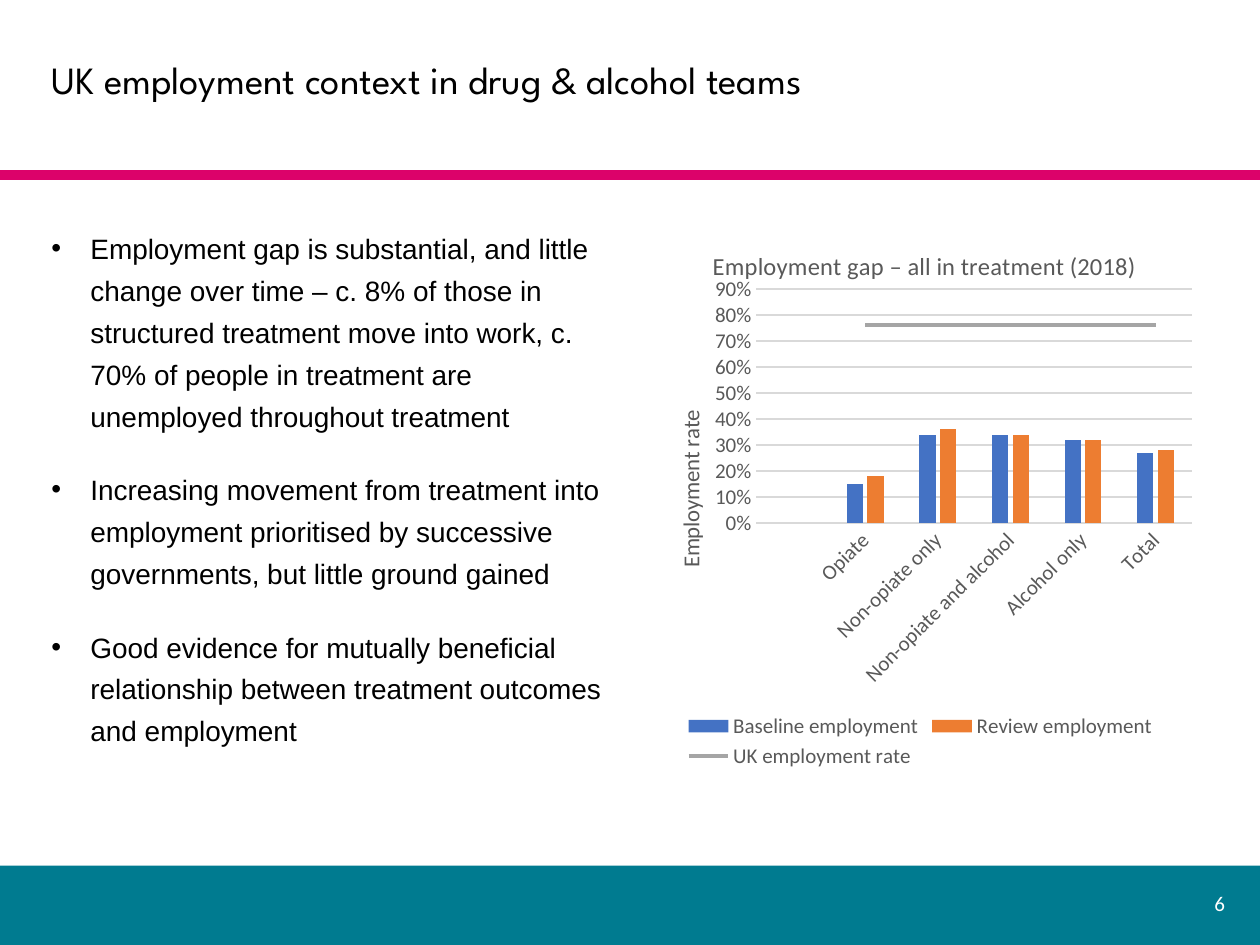
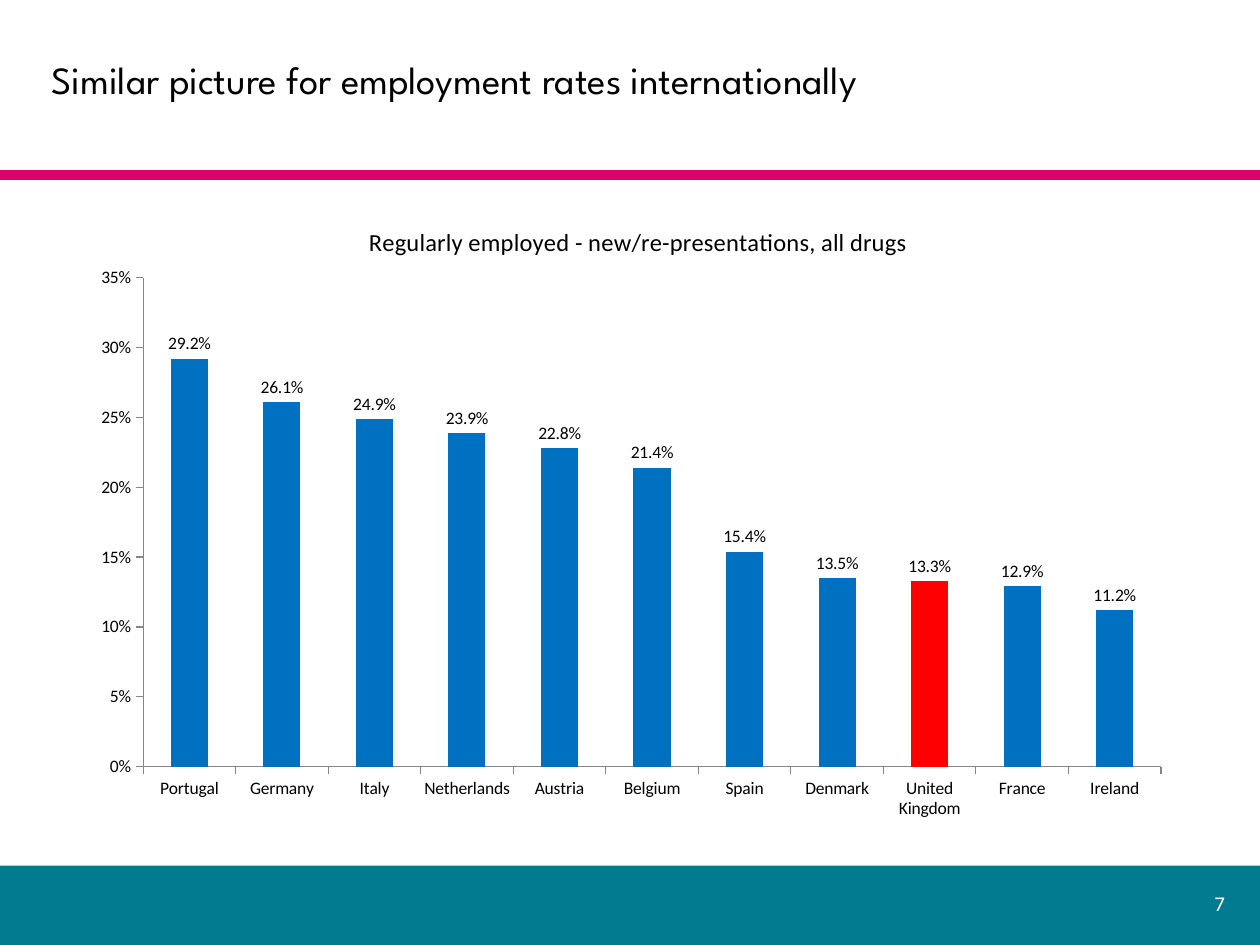
from lxml.etree import SubElement
from pptx import Presentation
from pptx.chart.data import CategoryChartData
from pptx.dml.color import RGBColor
from pptx.enum.chart import XL_CHART_TYPE as ChartType, XL_LEGEND_POSITION as LegendPosition
from pptx.enum.chart import XL_LABEL_POSITION as LabelPosition, XL_MARKER_STYLE as Marker
from pptx.enum.chart import XL_TICK_MARK as Tick
from pptx.enum.shapes import MSO_CONNECTOR as Connector, MSO_SHAPE as Shape
from pptx.enum.text import MSO_ANCHOR as Anchor, PP_ALIGN as Align
from pptx.oxml import parse_xml
from pptx.oxml.ns import nsdecls, qn
from pptx.util import Inches, Pt

COLUMNS, ROWS = 100, 75
BLACK, WHITE, TEAL, PINK = "000000", "FFFFFF", "007B90", "DC026A"
GREY_TEXT, PALE_GREY, AXIS_GREY = "595959", "D9D9D9", "868686"
BLUE, RED = "0070C0", "FF0000"


def colour(value):
    return RGBColor.from_string(value)


def set_font(font, size, ink=BLACK, face="Calibri"):
    font.size, font.name, font.bold = Pt(size), face, False
    font.color.rgb = colour(ink)


def set_line(line, ink, width=0.75):
    line.color.rgb = colour(ink)
    line.width = Pt(width)


def place(part, **shares):
    """Fix a chart part at shares of the chart's size."""
    for old in part.findall(qn("c:layout")):
        part.remove(old)
    layout = part.makeelement(qn("c:layout"))
    part.insert(0 if part.find(qn("c:tx")) is None else 1, layout)
    manual = SubElement(layout, qn("c:manualLayout"))
    if "w" in shares:
        SubElement(manual, qn("c:layoutTarget")).set("val", "inner")
    for axis in "xy":
        SubElement(manual, qn(f"c:{axis}Mode")).set("val", "edge")
    for side, share in shares.items():
        SubElement(manual, qn(f"c:{side}")).set("val", str(share))


def draw_as_line(chart, index):
    """Move one column series to a line plot on the same axes."""
    columns = chart.plots[0]._element
    series = columns.findall(qn("c:ser"))[index]
    for flag in series.findall(qn("c:invertIfNegative")):
        series.remove(flag)
    line_plot = parse_xml(
        f'<c:lineChart {nsdecls("c")}><c:grouping val="standard"/>'
        '<c:varyColors val="0"/></c:lineChart>')
    line_plot.append(series)
    SubElement(line_plot, qn("c:marker")).set("val", "1")
    for axis_id in columns.findall(qn("c:axId")):
        SubElement(line_plot, qn("c:axId")).set("val", axis_id.get("val"))
    columns.addnext(line_plot)
    return chart.plots[1].series[0]


class Deck:
    """Shared style and the slide being built."""

    def __init__(self):
        self.show = Presentation()
        self.show.slide_width, self.show.slide_height = Inches(10), Inches(7.5)
        self.slide = None

    def across(self, columns):
        return round(self.show.slide_width * columns / COLUMNS)

    def down(self, rows):
        return round(self.show.slide_height * rows / ROWS)

    def box(self, left, top, width, height):
        return self.across(left), self.down(top), self.across(width), self.down(height)

    def add_slide(self, heading, number):
        self.slide = self.show.slides.add_slide(self.show.slide_layouts[5])
        title = self.slide.shapes.title
        title.left, title.top, title.width, title.height = self.box(3.1, 2.3, 94, 8.4)
        frame = title.text_frame
        frame.text = heading
        frame.vertical_anchor = Anchor.MIDDLE
        line = frame.paragraphs[0]
        line.alignment, line.line_spacing = Align.LEFT, 0.9
        set_font(line.runs[0].font, 22, face="League Spartan")
        self.footer_band()
        self.rule()
        self.page_number(number)

    def footer_band(self):
        band = self.slide.shapes.add_shape(Shape.RECTANGLE, *self.box(0, 68.7, 100, 6.3))
        band.shadow.inherit = False
        band.fill.solid()
        band.fill.fore_color.rgb = colour(TEAL)
        band.line.fill.background()

    def rule(self):
        height = self.down(13.9)
        rule = self.slide.shapes.add_connector(
            Connector.STRAIGHT, 0, height, self.across(COLUMNS), height)
        set_line(rule.line, PINK, 6)
        SubElement(rule._element.spPr, qn("a:effectLst"))

    def page_number(self, number):
        frame = self.slide.shapes.add_textbox(*self.box(93.9, 69.7, 4.3, 4)).text_frame
        frame.word_wrap = True
        frame.vertical_anchor = Anchor.MIDDLE
        frame.text = str(number)
        frame.paragraphs[0].alignment = Align.RIGHT
        set_font(frame.paragraphs[0].runs[0].font, 12, WHITE)

    def bullets(self, points, *cells):
        frame = self.slide.shapes.add_textbox(*self.box(*cells)).text_frame
        frame.word_wrap = True
        frame.text = "\n".join(points)
        for point in frame.paragraphs:
            point.line_spacing = 1.25
            point.space_before, point.space_after = Pt(12), Pt(6)
            set_font(point.runs[0].font, 16, face="Arial")
            indent = point._p.get_or_add_pPr()
            indent.set("marL", str(Inches(0.31)))
            indent.set("indent", str(-Inches(0.31)))
            SubElement(indent, qn("a:buFont")).set("typeface", "Arial")
            SubElement(indent, qn("a:buChar")).set("char", "•")

    def column_chart(self, heading, ink, categories, series, gap, cells, plot, heading_at):
        data = CategoryChartData(number_format="0%")
        data.categories = categories
        for name, values in series.items():
            data.add_series(name, values)
        chart = self.slide.shapes.add_chart(
            ChartType.COLUMN_CLUSTERED, *self.box(*cells), data).chart
        set_font(chart.font, 10)
        chart.has_legend = False
        title = chart.chart_title
        title.text_frame.text = heading
        title.include_in_layout = False
        set_font(title.text_frame.paragraphs[0].runs[0].font, 14, ink)
        place(title._element, **heading_at)
        place(chart._chartSpace.chart.plotArea, **plot)
        chart.plots[0].gap_width = gap
        chart.plots[0].vary_by_categories = False
        return chart

    def style_axes(self, chart, size, ink, tick, top, step):
        for axis in (chart.category_axis, chart.value_axis):
            axis.major_tick_mark, axis.minor_tick_mark = tick, Tick.NONE
            axis.has_major_gridlines = False
            set_font(axis.tick_labels.font, size, ink)
            set_line(axis.format.line, AXIS_GREY)
        scale = chart.value_axis
        scale.minimum_scale, scale.maximum_scale, scale.major_unit = 0, top, step
        scale.tick_labels.number_format = "0%"
        scale.tick_labels.number_format_is_linked = False


def uk_context(deck):
    deck.add_slide("UK employment context in drug & alcohol teams", 6)
    deck.bullets([
        "Employment gap is substantial, and little change over time – c. 8% of those in "
        "structured treatment move into work, c. 70% of people in treatment are "
        "unemployed throughout treatment",
        "Increasing movement from treatment into employment prioritised by successive "
        "governments, but little ground gained",
        "Good evidence for mutually beneficial relationship between treatment outcomes "
        "and employment",
    ], 3.1, 17.2, 46.3, 48.2)
    gap_chart = deck.column_chart(
        "Employment gap – all in treatment (2018)", GREY_TEXT,
        ["", "Opiate", "Non-opiate only", "Non-opiate and alcohol", "Alcohol only", "Total"],
        {"Baseline employment": [None, 0.15, 0.34, 0.34, 0.32, 0.27],
         "Review employment": [None, 0.18, 0.36, 0.34, 0.32, 0.28],
         "UK employment rate": [None] + [0.76] * 5},
        219, (50.6, 17.2, 44.9, 44.2),
        dict(x=0.21, y=0.13, w=0.77, h=0.42), dict(x=0.125, y=0.05))
    deck.style_axes(gap_chart, 12, GREY_TEXT, Tick.NONE, 0.9, 0.1)
    uk_rate = draw_as_line(gap_chart, 2)
    uk_rate.smooth = False
    uk_rate.marker.style = Marker.NONE
    set_line(uk_rate.format.line, "A5A5A5", 2.25)
    columns = gap_chart.plots[0]
    columns.overlap = -27
    for stage, ink in zip(columns.series, ("4472C4", "ED7D31")):
        stage.format.fill.solid()
        stage.format.fill.fore_color.rgb = colour(ink)
    groups, rate = gap_chart.category_axis, gap_chart.value_axis
    set_line(groups.format.line, PALE_GREY)
    groups._element.find(qn("c:txPr")).find(qn("a:bodyPr")).set("rot", "-2700000")
    rate.format.line.fill.background()
    rate.has_major_gridlines = True
    set_line(rate.major_gridlines.format.line, PALE_GREY)
    rate_title = rate.axis_title
    rate_title.text_frame.text = "Employment rate"
    rate_title.text_frame._txBody.bodyPr.set("rot", "-5400000")
    set_font(rate_title.text_frame.paragraphs[0].runs[0].font, 13, GREY_TEXT)
    place(rate_title._element, x=0.06, y=0.34)
    gap_chart.has_legend = True
    gap_chart.legend.position = LegendPosition.BOTTOM
    gap_chart.legend.include_in_layout = False
    set_font(gap_chart.legend.font, 12, GREY_TEXT)


def international_rates(deck):
    deck.add_slide("Similar picture for employment rates internationally", 7)
    employed = {
        "Portugal": 0.292, "Germany": 0.261, "Italy": 0.249, "Netherlands": 0.239,
        "Austria": 0.228, "Belgium": 0.214, "Spain": 0.154, "Denmark": 0.135,
        "United Kingdom": 0.133, "France": 0.129, "Ireland": 0.112,
    }
    countries = list(employed)
    country_chart = deck.column_chart(
        "Regularly employed - new/re-presentations, all drugs", BLACK,
        countries, {"Series 1": employed.values()}, 150, (6.1, 15.5, 87.8, 50.4),
        dict(x=0.06, y=0.13, w=0.92, h=0.77), dict(x=0.26, y=0.04))
    deck.style_axes(country_chart, 10, BLACK, Tick.OUTSIDE, 0.35, 0.05)
    rates = country_chart.plots[0].series[0]
    uk = rates.points[countries.index("United Kingdom")]
    for bars, ink in ((rates, BLUE), (uk, RED)):
        bars.format.fill.solid()
        bars.format.fill.fore_color.rgb = colour(ink)
    labels = rates.data_labels
    labels.show_value = True
    labels.number_format, labels.number_format_is_linked = "0.0%", False
    labels.position = LabelPosition.OUTSIDE_END
    set_font(labels.font, 10)


def main():
    deck = Deck()
    uk_context(deck)
    international_rates(deck)
    deck.show.save("out.pptx")


if __name__ == "__main__":
    main()
